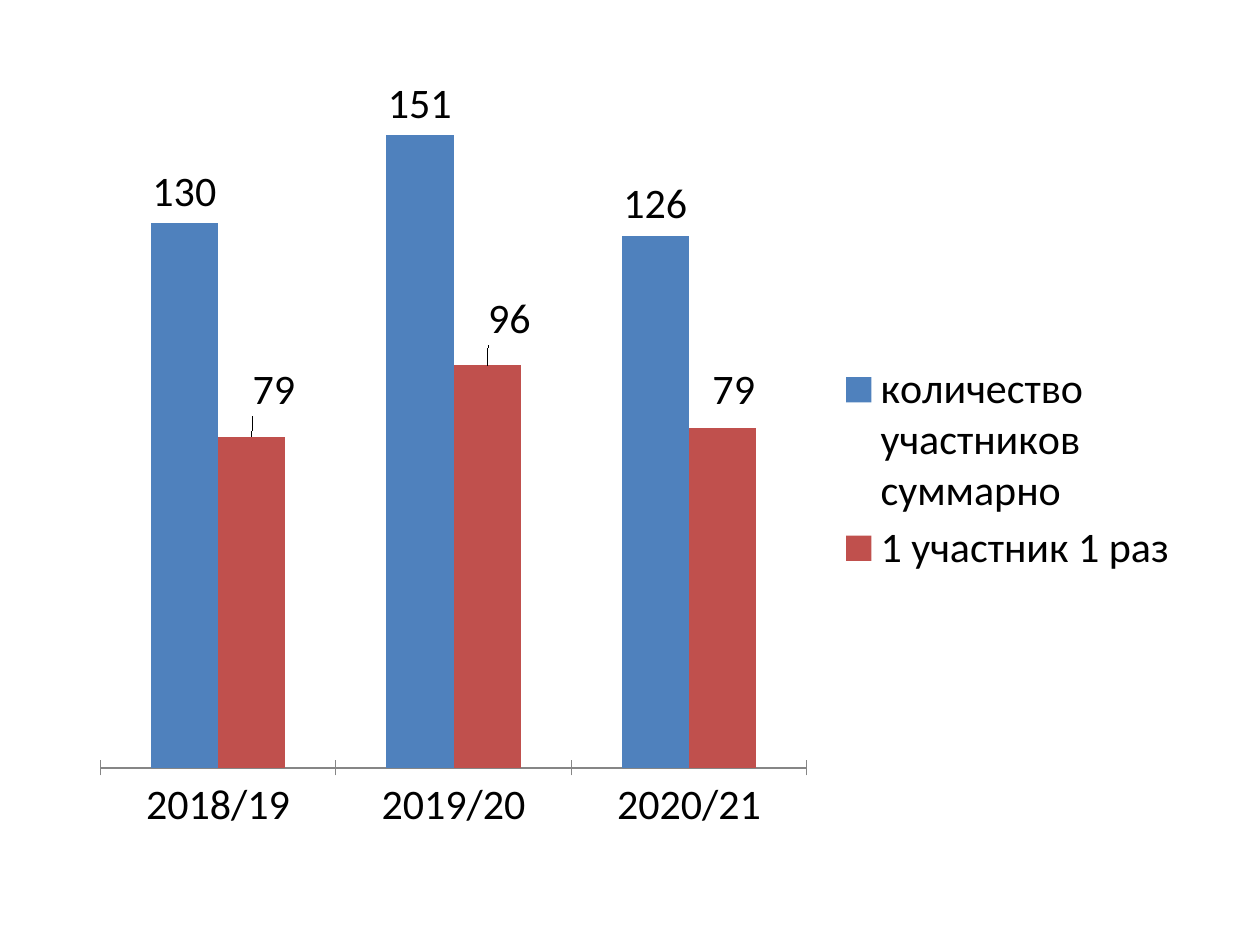
"""Build a slide with a clustered column chart of participants by school year."""
import pptx
import pptx.chart.data
import pptx.dml.color
import pptx.enum.chart
import pptx.oxml
import pptx.oxml.ns
import pptx.util
from pptx.util import Inches

THEME = {
    "font": "Calibri",
    "size": 24,
    "text": "000000",
    "axis": "868686",
    "series": ["4F81BD", "C0504D"],
}
YEARS = ["2018/19", "2019/20", "2020/21"]
SERIES = [
    ("количество участников суммарно", [130, 151, 127]),
    ("1 участник 1 раз", [79, 96, 81]),
]
SHOWN_LABELS = {(0, 2): "126", (1, 2): "79"}
LABEL_SHIFTS = [(0.02, -0.02), (0.02, -0.02), (0.01, -0.01)]
CHART_BOX = (0.62, 0.62, 8.83, 6.09)
PLOT_BOX = (0.80, 0.77, 5.61, 5.32)
LEGEND_BOX = (6.62, 2.85, 2.75, 1.75)
AXIS_MAXIMUM = 160


def rgb(value):
    return pptx.dml.color.RGBColor.from_string(value)


def style_font(font):
    font.name = THEME["font"]
    font.size = pptx.util.Pt(THEME["size"])
    font.color.rgb = rgb(THEME["text"])


def set_layout(parent, index, values, inner=False):
    for old_layout in parent.findall(pptx.oxml.ns.qn("c:layout")):
        parent.remove(old_layout)
    settings = [("layoutTarget", "inner")] if inner else []
    if len(values) == 4:
        settings += [("xMode", "edge"), ("yMode", "edge")]
    settings += zip("xywh", values)
    children = "".join(f'<c:{name} val="{value}"/>' for name, value in settings)
    namespace = pptx.oxml.ns.nsdecls("c")
    layout = pptx.oxml.parse_xml(
        f"<c:layout {namespace}><c:manualLayout>{children}</c:manualLayout></c:layout>"
    )
    parent.insert(index, layout)


def chart_fractions(box):
    left, top, width, height = box
    chart_left, chart_top, chart_width, chart_height = CHART_BOX
    return (
        round((left - chart_left) / chart_width, 3),
        round((top - chart_top) / chart_height, 3),
        round(width / chart_width, 3),
        round(height / chart_height, 3),
    )


def add_participant_chart(slide):
    data = pptx.chart.data.CategoryChartData()
    data.categories = YEARS
    for name, values in SERIES:
        data.add_series(name, values)
    chart = slide.shapes.add_chart(
        pptx.enum.chart.XL_CHART_TYPE.COLUMN_CLUSTERED,
        *map(Inches, CHART_BOX),
        data,
    ).chart
    chart.has_title = False
    style_font(chart.font)
    return chart


def style_axes(chart):
    chart.value_axis.visible = False
    chart.value_axis.has_major_gridlines = False
    chart.value_axis.minimum_scale = 0
    chart.value_axis.maximum_scale = AXIS_MAXIMUM
    axis = chart.category_axis
    axis.major_tick_mark = pptx.enum.chart.XL_TICK_MARK.CROSS
    axis.format.line.color.rgb = rgb(THEME["axis"])
    style_font(axis.tick_labels.font)


def style_series(chart):
    plot = chart.plots[0]
    plot.gap_width = 150
    plot.overlap = 0
    plot.vary_by_categories = False
    outside_end = pptx.enum.chart.XL_LABEL_POSITION.OUTSIDE_END
    for series, color in zip(plot.series, THEME["series"]):
        series.format.fill.solid()
        series.format.fill.fore_color.rgb = rgb(color)
        labels = series.data_labels
        labels.show_value = True
        labels.position = outside_end
        style_font(labels.font)

    for (series_index, point_index), text in SHOWN_LABELS.items():
        label = plot.series[series_index].points[point_index].data_label
        label.text_frame.text = text
        style_font(label.text_frame.paragraphs[0].runs[0].font)
        label.position = outside_end
    for point_index in range(len(YEARS) - 1):
        label = plot.series[1].points[point_index].data_label
        style_font(label.font)
        label.position = outside_end
    shifted_labels = chart.element.xpath(".//c:ser[2]/c:dLbls/c:dLbl")
    for label_element, shift in zip(shifted_labels, LABEL_SHIFTS):
        set_layout(label_element, 1, shift)


def place_plot_and_legend(chart):
    chart.has_legend = True
    chart.legend.position = pptx.enum.chart.XL_LEGEND_POSITION.RIGHT
    chart.legend.include_in_layout = False
    style_font(chart.legend.font)
    plot_area = chart.element.xpath(".//c:plotArea")[0]
    set_layout(plot_area, 0, chart_fractions(PLOT_BOX), inner=True)
    set_layout(chart.element.xpath(".//c:legend")[0], 1, chart_fractions(LEGEND_BOX))


def main():
    presentation = pptx.Presentation()
    presentation.slide_width = Inches(10)
    presentation.slide_height = Inches(7.5)
    slide = presentation.slides.add_slide(presentation.slide_layouts[6])
    chart = add_participant_chart(slide)
    style_axes(chart)
    style_series(chart)
    place_plot_and_legend(chart)
    presentation.save("out.pptx")


if __name__ == "__main__":
    main()
